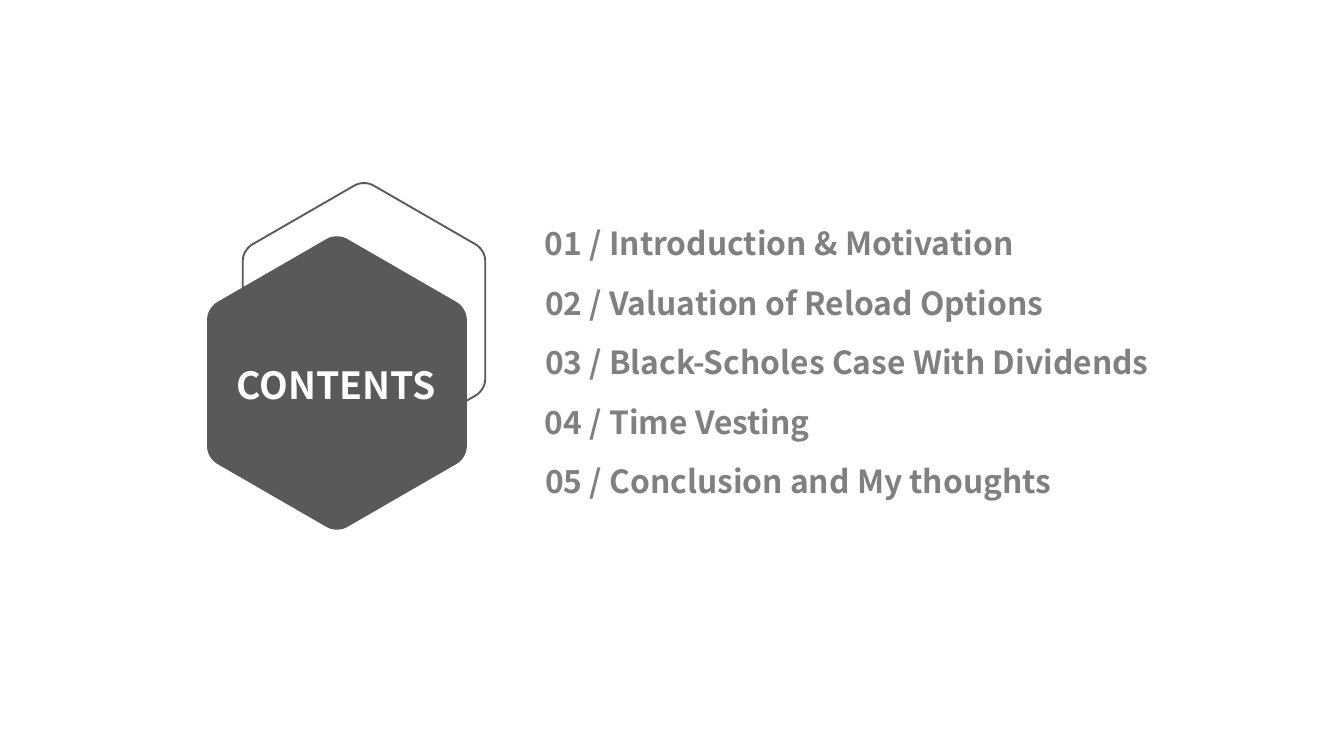
"""Build a contents slide: two rounded hexagons beside a numbered list."""
import math

import pptx
import pptx.dml.color
import pptx.enum.text
import pptx.util

PX = 914400 / 134.4
FONT = "Noto Sans CJK SC"
DARK, GREY, WHITE = "595959", "808080", "FFFFFF"

TITLE = "CONTENTS"
# title, box width, box height
ITEMS = [
    ("Introduction & Motivation", 603, 48),
    ("Valuation of Reload Options", 704, 48),
    ("Black-Scholes Case With Dividends", 789, 48),
    ("Time Vesting", 672, 87),
    ("Conclusion and My thoughts", 789, 48),
]
LIST_LEFT, LIST_TOP, LIST_PITCH = 535, 219, 59.5
CUT, PULL, STEPS = 0.08, 0.6, 10


def emu(px):
    return pptx.util.Emu(round(px * PX))


def color(value):
    return pptx.dml.color.RGBColor.from_string(value)


def mix(a, b, t):
    return tuple(u + (v - u) * t for u, v in zip(a, b))


def hexagon_points(cx, cy, radius):
    """Outline of a pointy-top hexagon with each corner drawn as a cubic curve."""
    angles = [math.radians(60 * i - 90) for i in range(6)]
    corners = [(cx + radius * math.cos(a), cy + radius * math.sin(a)) for a in angles]
    points = []
    for i, corner in enumerate(corners):
        start = mix(corner, corners[i - 1], CUT)
        end = mix(corner, corners[(i + 1) % 6], CUT)
        c1, c2 = mix(start, corner, PULL), mix(end, corner, PULL)
        for n in range(STEPS + 1):
            t = n / STEPS
            weights = ((1 - t) ** 3, 3 * t * (1 - t) ** 2, 3 * t * t * (1 - t), t ** 3)
            points.append(tuple(
                emu(sum(w * p[axis] for w, p in zip(weights, (start, c1, c2, end))))
                for axis in (0, 1)))
    return points


def add_hexagon(s, cx, cy, radius, fill=None, line=None):
    points = hexagon_points(cx, cy, radius)
    builder = s.shapes.build_freeform(*points[0])
    builder.add_line_segments(points[1:], close=True)
    sp = builder.convert_to_shape()
    sp.shadow.inherit = False
    if fill:
        sp.fill.solid()
        sp.fill.fore_color.rgb = color(fill)
    else:
        sp.fill.background()
    if line:
        sp.line.color.rgb = color(line)
        sp.line.width = pptx.util.Pt(1)
    else:
        sp.line.fill.background()


def add_text(s, text, box, size, ink, align=pptx.enum.text.PP_ALIGN.LEFT):
    tf = s.shapes.add_textbox(*map(emu, box)).text_frame
    tf.word_wrap = True
    tf.auto_size = pptx.enum.text.MSO_AUTO_SIZE.SHAPE_TO_FIT_TEXT
    tf.margin_left = tf.margin_right = emu(10)
    tf.margin_top = tf.margin_bottom = emu(5)
    tf.text = text
    p = tf.paragraphs[0]
    p.alignment = align
    r = p.runs[0]
    r.font.name, r.font.size, r.font.bold = FONT, pptx.util.Pt(size), True
    r.font.color.rgb = color(ink)


def main():
    prs = pptx.Presentation()
    prs.slide_width, prs.slide_height = emu(1344), emu(756)
    s = prs.slides.add_slide(prs.slide_layouts[6])
    add_hexagon(s, 364, 320, 140, line=DARK)
    add_hexagon(s, 337, 383, 150, fill=DARK)
    add_text(s, TITLE, (214, 357, 245, 55), 20, WHITE, pptx.enum.text.PP_ALIGN.CENTER)
    for i, (title, width, height) in enumerate(ITEMS):
        box = (LIST_LEFT, LIST_TOP + i * LIST_PITCH, width, height)
        add_text(s, f"{i + 1:02d} / {title}", box, 17, GREY)
    prs.save("out.pptx")


if __name__ == "__main__":
    main()
